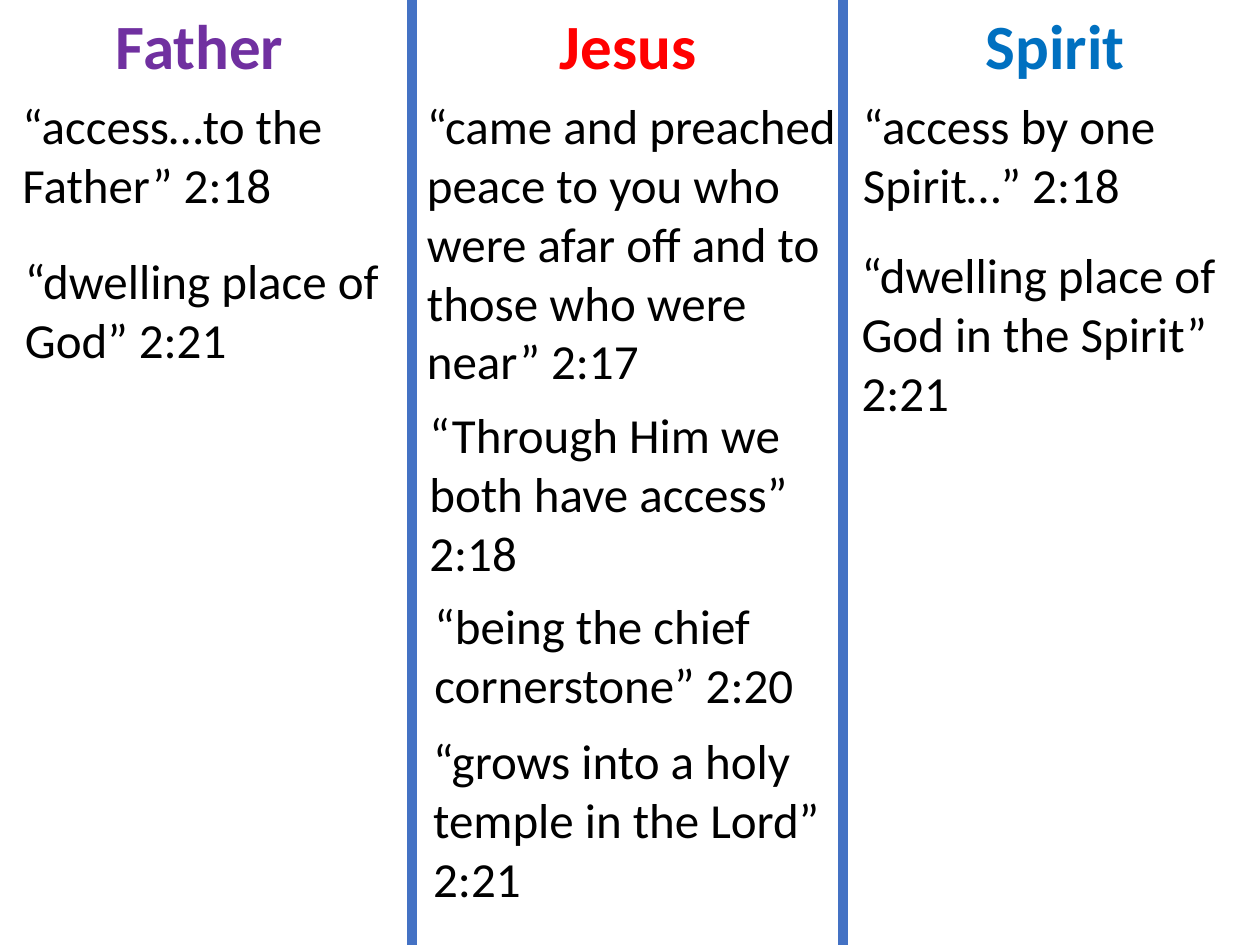
from dataclasses import dataclass

from lxml.etree import SubElement
from pptx import Presentation
from pptx.dml.color import RGBColor
from pptx.enum.shapes import MSO_CONNECTOR
from pptx.enum.text import MSO_AUTO_SIZE, PP_ALIGN
from pptx.oxml.ns import qn
from pptx.slide import Slide
from pptx.util import Inches, Pt

SLIDE_WIDTH, SLIDE_HEIGHT = 10, 7.5
DIVIDERS = (0.327, 0.669)  # shares of the slide's width
HEADING_HEIGHT = 0.71
LINE_HEIGHT, BOX_PADDING = 0.47, 0.1
FONT = "Calibri"
COLORS = {
    "divider": "4472C4",
    "father": "7030A0",
    "jesus": "FF0000",
    "spirit": "0070C0",
    "quote": "000000",
}


@dataclass(frozen=True)
class Quote:
    text: str
    left: float
    top: float
    lines: int


@dataclass(frozen=True)
class Column:
    heading: str
    color: str
    left: float
    width: float
    quote_width: float
    quotes: tuple[Quote, ...]


COLUMNS = (
    Column("Father", "father", 0, 3.17, 3.17, (
        Quote("“access…to the Father” 2:18", 0.08, HEADING_HEIGHT, 2),
        Quote("“dwelling place of God” 2:21", 0.1, 1.94, 2),
    )),
    Column("Jesus", "jesus", 3.25, 3.47, 3.7, (
        Quote("“came and preached peace to you who were afar off and to "
              "those who were near” 2:17", 3.29, HEADING_HEIGHT, 5),
        Quote("“Through Him we both have access” 2:18", 3.31, 3.16, 3),
        Quote("“being the chief cornerstone” 2:20", 3.35, 4.68, 2),
        Quote("“grows into a holy temple in the Lord” 2:21", 3.34, 5.75, 3),
    )),
    Column("Spirit", "spirit", 6.75, 3.25, 3.17, (
        Quote("“access by one Spirit…” 2:18", 6.75, HEADING_HEIGHT, 2),
        Quote("“dwelling place of God in the Spirit” 2:21", 6.74, 1.89, 3),
    )),
)


def add_divider(slide: Slide, share: float) -> None:
    x = Inches(share * SLIDE_WIDTH)
    line = slide.shapes.add_connector(
        MSO_CONNECTOR.STRAIGHT, x, 0, x, Inches(SLIDE_HEIGHT))
    line.line.color.rgb = RGBColor.from_string(COLORS["divider"])
    line.line.width = Pt(6)
    SubElement(line._element.spPr, qn("a:effectLst"))


def add_text(slide: Slide, text: str, left: float, top: float, width: float,
             height: float, size: int, color: str, heading: bool = False) -> None:
    box = slide.shapes.add_textbox(*map(Inches, (left, top, width, height)))
    frame = box.text_frame
    frame.word_wrap = True
    frame.auto_size = MSO_AUTO_SIZE.SHAPE_TO_FIT_TEXT
    frame.text = text
    para = frame.paragraphs[0]
    para.alignment = PP_ALIGN.CENTER if heading else PP_ALIGN.LEFT
    font = para.runs[0].font
    font.name, font.size, font.bold = FONT, Pt(size), heading
    font.color.rgb = RGBColor.from_string(COLORS[color])


def add_column(slide: Slide, column: Column) -> None:
    add_text(slide, column.heading, column.left, 0, column.width,
             HEADING_HEIGHT, 36, column.color, heading=True)
    for quote in column.quotes:
        height = BOX_PADDING + quote.lines * LINE_HEIGHT
        add_text(slide, quote.text, quote.left, quote.top,
                 column.quote_width, height, 28, "quote")


def main() -> None:
    deck = Presentation()
    deck.slide_width, deck.slide_height = Inches(SLIDE_WIDTH), Inches(SLIDE_HEIGHT)
    slide = deck.slides.add_slide(deck.slide_layouts.get_by_name("Blank"))
    for share in DIVIDERS:
        add_divider(slide, share)
    for column in COLUMNS:
        add_column(slide, column)
    deck.save("out.pptx")


if __name__ == "__main__":
    main()
